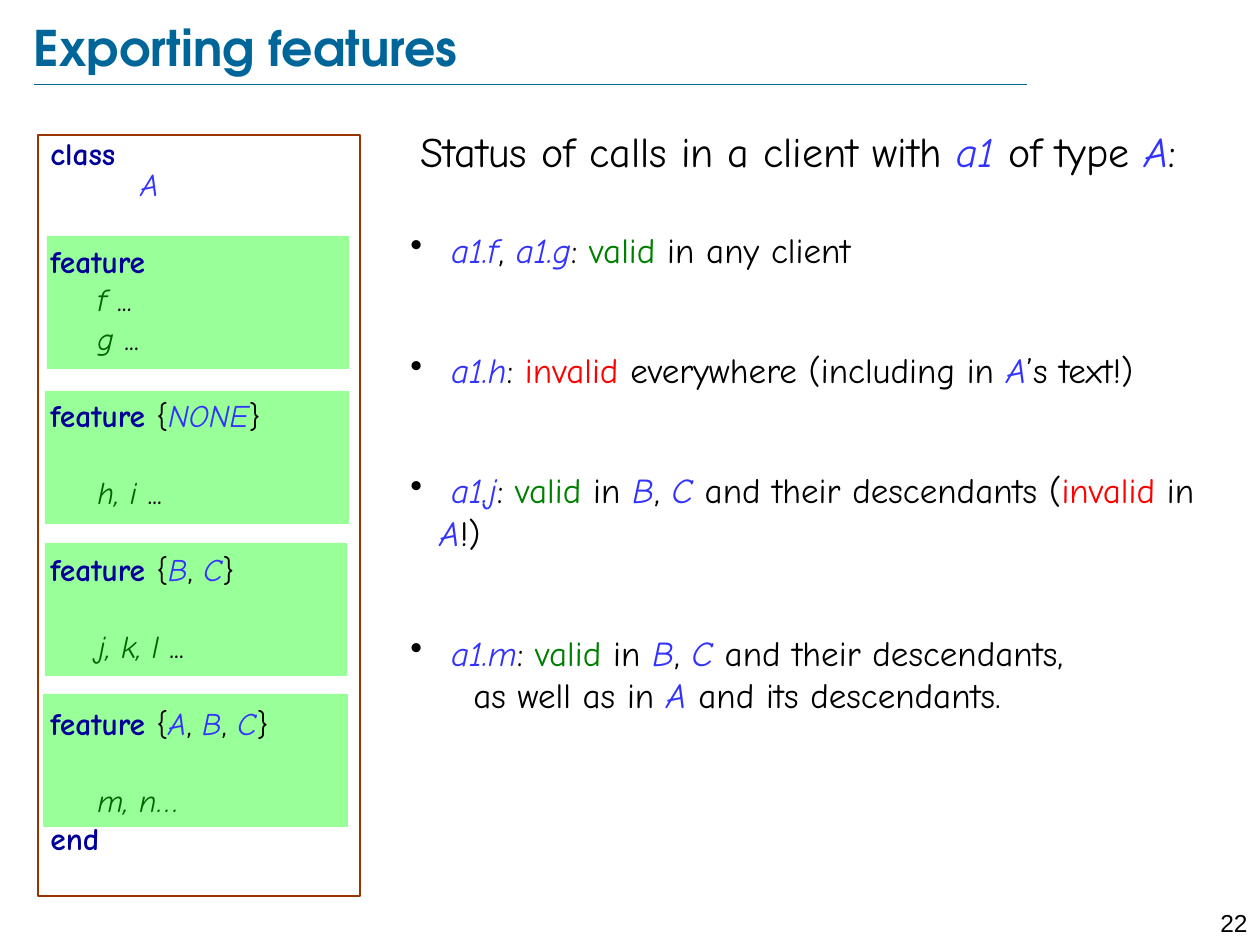
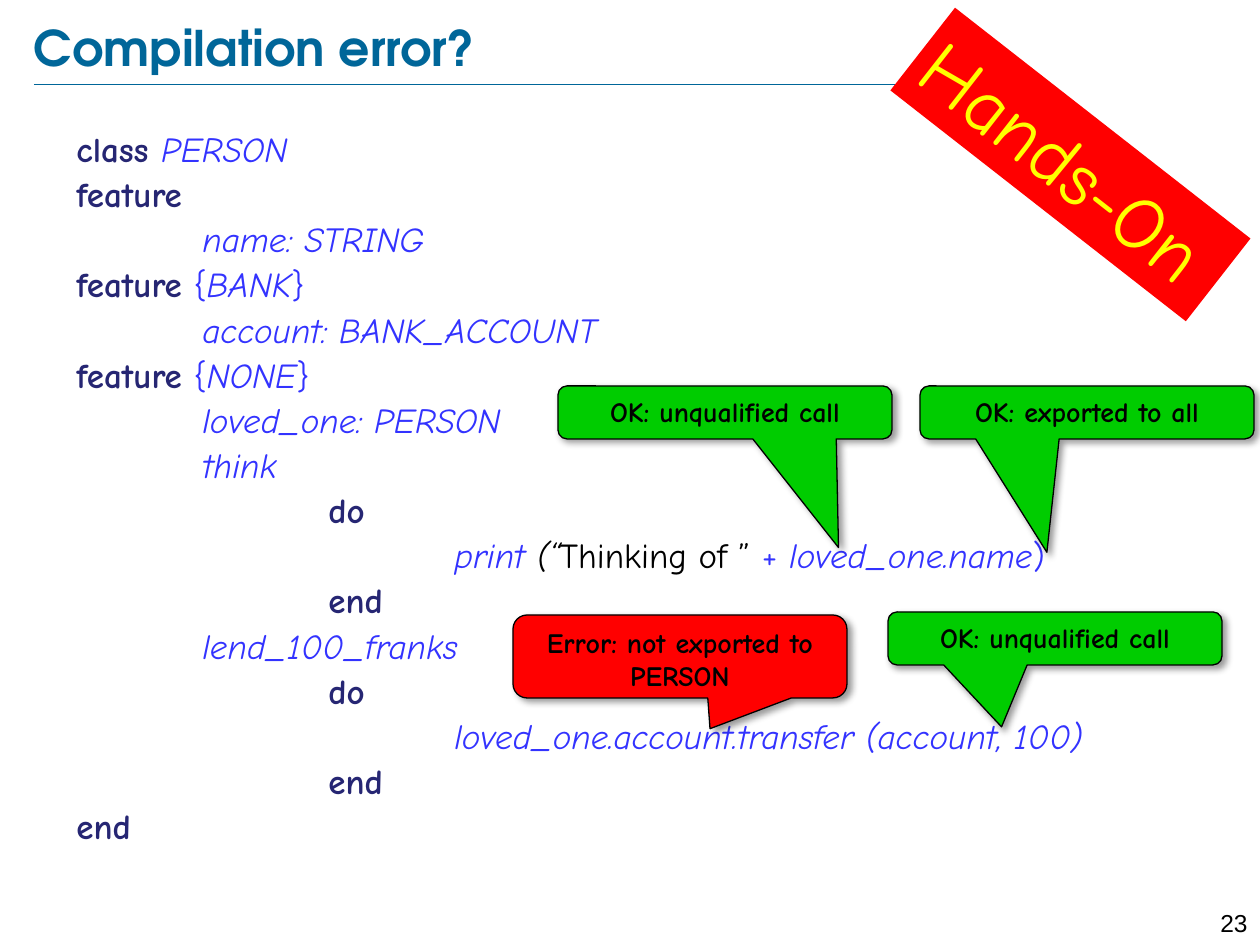
"""Build two slides on exporting features and access errors."""
from lxml import etree
from pptx import Presentation
from pptx import util as u
from pptx.dml.color import RGBColor
from pptx.enum import shapes, text
from pptx.oxml import ns

PX = 914400 // 126
COMIC, HEAD, PLAIN = "Comic Neue", "TeX Gyre Adventor", "Arial"
LEFT, MID, RIGHT = text.PP_ALIGN.LEFT, text.PP_ALIGN.CENTER, text.PP_ALIGN.RIGHT
TEAL, BLACK, BLUE, RED = "006699", "000000", "3333FF", "FF0000"
GREEN, MINT, BROWN = "00CC00", "99FF99", "993300"

STYLES = {
    "title": (TEAL, True, False),
    "plain": (BLACK, False, False),
    "bold": (BLACK, True, False),
    "slant": (BLACK, False, True),
    "name": (BLUE, False, True),
    "mark": (BLUE, False, False),
    "key": ("000099", True, False),
    "word": ("262673", True, False),
    "call": ("006400", False, True),
    "good": ("008000", False, False),
    "bad": (RED, False, False),
    "sign": ("FFFF00", False, False),
}


def paint(fill, hue):
    fill.solid()
    fill.fore_color.rgb = RGBColor.from_string(hue)


def write(shape, line, size, font=COMIC, align=LEFT, gap=0, space=1.0,
          left=0, bullet=False, wrap=True, anchor=text.MSO_ANCHOR.TOP):
    """Add one paragraph of style:text pieces parted by bars."""
    frame = shape.text_frame
    frame.word_wrap, frame.vertical_anchor = wrap, anchor
    first = not frame.text
    para = frame.paragraphs[0] if first else frame.add_paragraph()
    props = para._p.get_or_add_pPr()
    props.set("marL", str(left * PX))
    props.set("indent", str(-left * PX if bullet else 0))
    if bullet:
        etree.SubElement(props, ns.qn("a:buChar")).set("char", "•")
    para.alignment, para.line_spacing = align, space
    para.space_before = u.Pt(0 if first else gap)
    for piece in line.split("|"):
        style, _, words = piece.partition(":")
        hue, bold, slant = STYLES[style]
        run = para.add_run()
        run.text = words
        run.font.size, run.font.name = u.Pt(size), font
        run.font.bold, run.font.italic = bold, slant
        paint(run.font.fill, hue)


deck = Presentation()
deck.slide_width, deck.slide_height = 1260 * PX, 945 * PX

pages = []
for number, title in ((22, "Exporting features"), (23, "Compilation error?")):
    page = deck.slides.add_slide(deck.slide_layouts[6])
    rule = page.shapes.add_connector(
        shapes.MSO_CONNECTOR.STRAIGHT, 34 * PX, 84 * PX, 1027 * PX, 84 * PX)
    paint(rule.line.fill, TEAL)
    rule.line.width = u.Pt(0.25)
    etree.SubElement(rule._element.spPr, ns.qn("a:effectLst"))
    foot = page.shapes.add_textbox(1191 * PX, 902 * PX, 69 * PX, 30 * PX)
    write(foot, f"plain:{number}", 14, PLAIN, RIGHT)
    head = page.shapes.add_textbox(34 * PX, 16 * PX, 1095 * PX, 61 * PX)
    frame = head.text_frame
    frame.margin_left = frame.margin_right = 0
    frame.margin_top = frame.margin_bottom = 0
    write(head, f"title:{title}", 28, HEAD, anchor=text.MSO_ANCHOR.MIDDLE)
    pages.append(page.shapes)
export, error = pages

for x, y, wide in ((43, 694, 305), (45, 543, 302), (45, 391, 304), (47, 236, 302)):
    band = export.add_shape(
        shapes.MSO_SHAPE.RECTANGLE, x * PX, y * PX, wide * PX, 133 * PX)
    band.shadow.inherit = False
    paint(band.fill, MINT)
    band.line.fill.background()

rules = export.add_textbox(398 * PX, 222 * PX, 832 * PX, 617 * PX)
for line in (
    "plain: |name:a1.f|plain:, |name:a1.g|plain:: |good:valid |plain:in any client",
    "plain: |name:a1.h|plain:: |bad:invalid |plain:everywhere (including in "
    "|name:A|plain:’s text!)",
    "plain: |name:a1.j|plain:: |good:valid |plain:in |name:B|plain:, |name:C "
    "|plain:and their descendants (|bad:invalid |plain:in |name:A|plain:!)",
    "plain: |name:a1.m|plain:: |good:valid |plain:in |name:B|plain:, |name:C"
    "|plain: and their descendants,",
):
    write(rules, line, 20, gap=44.4, space=1.01, left=29, bullet=True)
write(rules, "plain:as well as in |name:A|plain: and its descendants.", 20,
      space=1.01, left=63)

status = export.add_textbox(360 * PX, 134 * PX, 877 * PX, 50 * PX)
write(status, "plain:Status of calls in a client with |name:a1 |plain:of type "
      "|name:A|plain::", 24, align=MID, space=0.69)

box = export.add_shape(
    shapes.MSO_SHAPE.RECTANGLE, 38 * PX, 135 * PX, 322 * PX, 761 * PX)
box.shadow.inherit = False
box.fill.background()
paint(box.line.fill, BROWN)
box.line.width = u.Pt(1.5)
NEAR, FAR = 4.5, 26.5
for left, gap, line in (
    (0, 0, "key:class"),
    (90, 0, "name:A"),
    (0, FAR, "key:feature"),
    (47, NEAR, "call:f|plain: ..."),
    (47, NEAR, "call:g|plain: ..."),
    (0, FAR, "key:feature |plain:{|name:NONE|plain:}"),
    (47, FAR, "call:h, i|plain: ..."),
    (0, FAR, "key:feature |plain:{|name:B|plain:, |name:C|plain:}"),
    (47, FAR, "call:j, k, l |plain:..."),
    (0, FAR, "key:feature |plain:{|name:A|plain:, |name:B|plain:, |name:C|plain:}"),
    (47, FAR, "call:m, n…"),
    (0, NEAR, "key:end"),
):
    write(box, line, 18, gap=gap, space=0.81, left=left)

code = error.add_textbox(64 * PX, 126 * PX, 1160 * PX, 741 * PX)
for level, line in (
    (0, "word:class |name:PERSON"),
    (0, "word:feature"),
    (1, "name:name: STRING"),
    (0, "word:feature|mark: {|name:BANK|mark:}"),
    (1, "name:account: BANK_ACCOUNT"),
    (0, "word:feature|mark: {|name:NONE|mark:}"),
    (1, "name:loved_one: PERSON"),
    (1, "name:think"),
    (2, "word:do"),
    (3, "name:print |slant:(“|plain:Thinking of ” |mark:+ |name:loved_one.name|mark:)"),
    (2, "word:end"),
    (1, "name:lend_100_franks"),
    (2, "word:do"),
    (3, "name:loved_one.account.transfer (account, 100)"),
    (2, "word:end"),
    (0, "word:end"),
):
    write(code, line, 20, gap=4.2, space=0.9, left=126 * level)

sign = error.add_shape(
    shapes.MSO_SHAPE.RECTANGLE, 883 * PX, 112 * PX, 375 * PX, 105 * PX)
sign.shadow.inherit = False
sign.rotation = 38
paint(sign.fill, RED)
sign.line.fill.background()
write(sign, "sign:Hands-On", 44, wrap=False)

for x, y, high, tip, hue, note in (
    (558, 386, 53, (0.34, 2.55), GREEN, "OK: unqualified call"),
    (920, 386, 53, (-0.12, 2.64), GREEN, "OK: exported to all"),
    (888, 612, 53, (-0.16, 1.67), GREEN, "OK: unqualified call"),
    (513, 615, 83, (0.09, 0.87), RED, "Error: not exported to PERSON"),
):
    hint = error.add_shape(shapes.MSO_SHAPE.ROUNDED_RECTANGULAR_CALLOUT,
                           x * PX, y * PX, 334 * PX, high * PX)
    for spot, value in enumerate((*tip, 0.17)):
        hint.adjustments[spot] = value
    paint(hint.fill, hue)
    paint(hint.line.fill, BLACK)
    hint.line.width = u.Pt(0.75)
    hint.shadow.inherit = False
    glow = etree.SubElement(
        hint._element.spPr.find(ns.qn("a:effectLst")), ns.qn("a:outerShdw"),
        blurRad=str(u.Pt(4)), dist=str(u.Pt(3)), dir="2700000", rotWithShape="0")
    tint = etree.SubElement(glow, ns.qn("a:srgbClr"), val=BLACK)
    etree.SubElement(tint, ns.qn("a:alpha"), val="40000")
    write(hint, f"bold:{note}", 16, align=MID)

deck.save("out.pptx")
